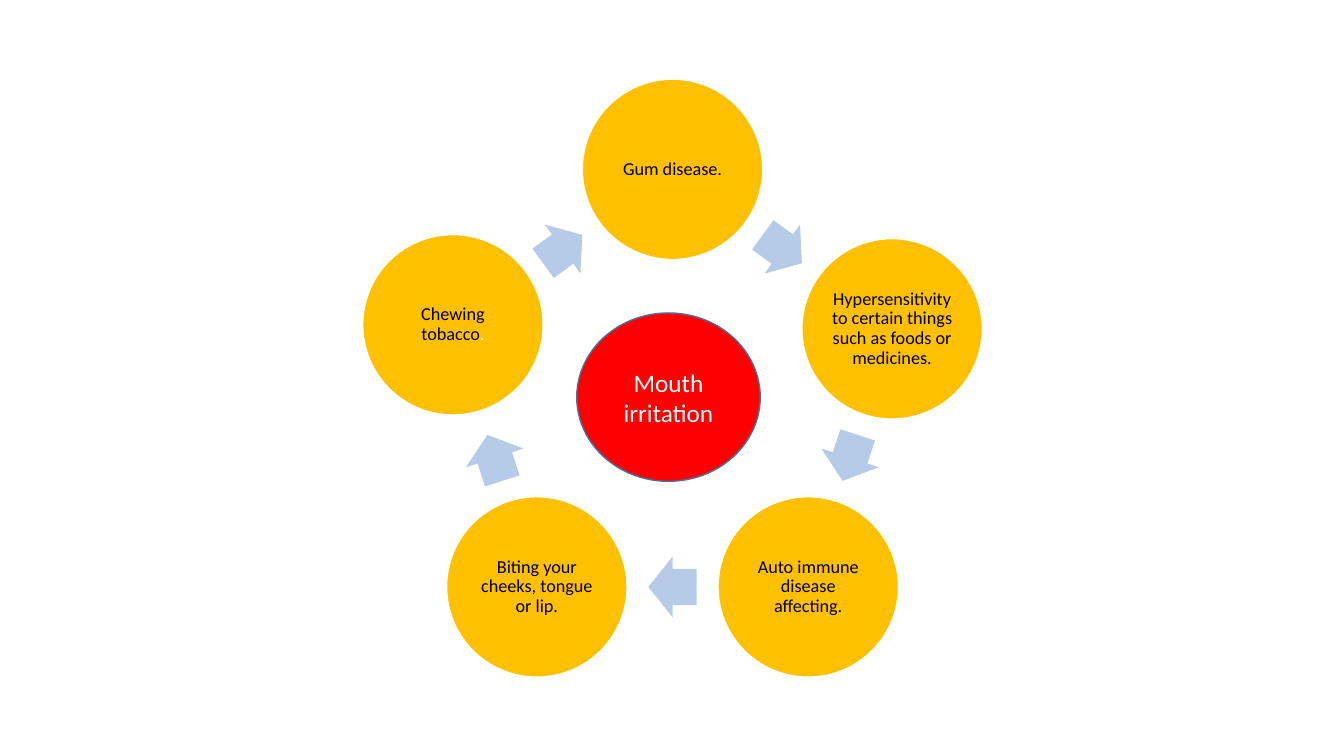
"""Builds a slide with a ring of causes around mouth irritation."""
import math
from dataclasses import dataclass

from pptx import Presentation
from pptx import util as u
from pptx.dml import color
from pptx.enum import shapes, text


@dataclass(frozen=True)
class Theme:
    """Colours and type sizes of the slide."""
    font: str = "Calibri"
    cause_size: int = 13
    topic_size: int = 18
    cause_fill: str = "FFC000"
    arrow_fill: str = "B5CBE7"
    topic_fill: str = "FF0000"
    topic_line: str = "43739E"
    dark: str = "000000"
    light: str = "FFFFFF"


THEME = Theme()
RING_X, RING_Y, RING_RADIUS = 6.67, 3.97, 2.29
CAUSE_SIZE = 1.79
ARROW_WIDTH, ARROW_HEIGHT = 0.48, 0.6
CAUSES = [
    (["Gum disease."], 0),
    (["Hypersensitivity to certain things such as foods or medicines."], 0),
    (["Auto immune disease affecting."], 0),
    (["Biting your cheeks, tongue or lip."], 0),
    (["Chewing tobacco", "."], -0.04),
]


def rgb(value):
    """Turn a hex string into a colour."""
    return color.RGBColor.from_string(value)


def ring_point(angle, radius):
    """Return the point at a clockwise angle from the top of the ring."""
    turn = math.radians(angle)
    return RING_X + radius * math.sin(turn), RING_Y - radius * math.cos(turn)


def add_centred(slide, kind, centre, width, height, fill, line=None):
    """Add a filled shape around a centre point."""
    x, y = centre
    shape = slide.shapes.add_shape(
        kind, u.Inches(x - width / 2), u.Inches(y - height / 2),
        u.Inches(width), u.Inches(height))
    shape.shadow.inherit = False
    shape.fill.solid()
    shape.fill.fore_color.rgb = rgb(fill)
    if line:
        shape.line.color.rgb = rgb(line)
        shape.line.width = u.Pt(1)
    else:
        shape.line.fill.background()
    return shape


def write_label(shape, parts, size, colours):
    """Write centred text, one run for each part."""
    frame = shape.text_frame
    frame.word_wrap = True
    frame.vertical_anchor = text.MSO_ANCHOR.MIDDLE
    label = frame.paragraphs[0]
    label.alignment = text.PP_ALIGN.CENTER
    for part, colour in zip(parts, colours):
        run = label.add_run()
        run.text = part
        run.font.name = THEME.font
        run.font.size = u.Pt(size)
        run.font.color.rgb = rgb(colour)
    return frame


def add_cause(slide, angle, parts, nudge):
    """Add one cause circle on the ring."""
    x, y = ring_point(angle, RING_RADIUS)
    cause = add_centred(slide, shapes.MSO_SHAPE.OVAL, (x, y + nudge),
                        CAUSE_SIZE, CAUSE_SIZE, THEME.cause_fill, THEME.light)
    frame = write_label(cause, parts, THEME.cause_size, (THEME.dark, THEME.light))
    frame.margin_left = frame.margin_right = u.Inches(0.02)
    frame.margin_top = frame.margin_bottom = u.Inches(0.02)
    frame.paragraphs[0].line_spacing = 0.9


def add_arrow(slide, angle, radius):
    """Add an arrow that points clockwise along the ring."""
    arrow = add_centred(slide, shapes.MSO_SHAPE.RIGHT_ARROW,
                        ring_point(angle, radius),
                        ARROW_WIDTH, ARROW_HEIGHT, THEME.arrow_fill)
    arrow.adjustments[0] = 0.6
    arrow.adjustments[1] = 0.5
    arrow.rotation = angle


def add_topic(slide):
    """Add the topic in the middle of the ring."""
    topic = add_centred(slide, shapes.MSO_SHAPE.FLOWCHART_CONNECTOR, (6.63, 3.94),
                        1.82, 1.67, THEME.topic_fill, THEME.topic_line)
    write_label(topic, ["Mouth irritation"], THEME.topic_size, [THEME.light])


def main():
    """Build and save the slide."""
    deck = Presentation()
    deck.slide_width, deck.slide_height = u.Inches(13.33), u.Inches(7.5)
    slide = deck.slides.add_slide(deck.slide_layouts[6])
    step = 360 / len(CAUSES)
    arrow_radius = RING_RADIUS * math.cos(math.radians(step / 2))
    for place, (parts, nudge) in enumerate(CAUSES):
        add_cause(slide, place * step, parts, nudge)
        add_arrow(slide, (place + 0.5) * step, arrow_radius)
    add_topic(slide)
    deck.save("out.pptx")


if __name__ == "__main__":
    main()
